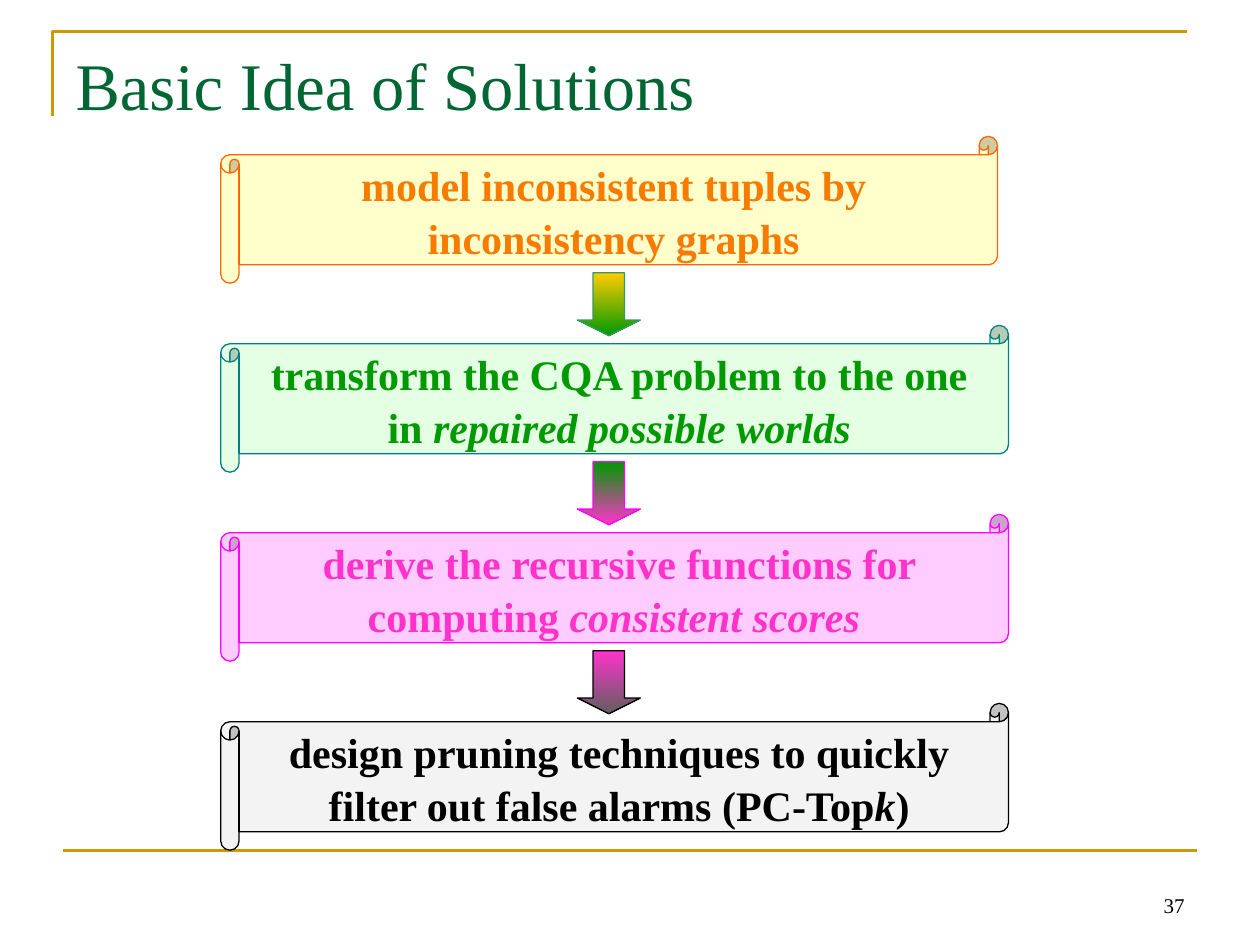
from dataclasses import dataclass

from lxml.etree import SubElement
from pptx import Presentation
from pptx.dml.color import RGBColor as RGB
from pptx.enum.shapes import MSO_CONNECTOR as CONN, MSO_SHAPE as SHAPE
from pptx.enum.text import MSO_ANCHOR as ANCHOR, MSO_AUTO_SIZE as AUTO, PP_ALIGN as ALIGN
from pptx.oxml.ns import qn
from pptx.util import Cm, Pt


@dataclass(frozen=True)
class Theme:
    font: str = "Times New Roman"
    title_size: int = 38
    step_size: int = 24
    number_size: int = 12
    rule_width: float = 1.5
    outline_width: float = 0.75
    title: str = "006633"
    rule: str = "CC9900"
    ink: str = "000000"
    # Each step: fill, outline, text
    steps: tuple = (
        ("FFFFCC", "FF6600", "F67B00"),
        ("E5FFE5", "008080", "009900"),
        ("FFCCFF", "FF00FF", "FF33CC"),
        ("F3F3F3", "000000", "000000"),
    )
    # Each arrow: gradient start, gradient end, outline
    arrows: tuple = (
        ("FFCC00", "009900", "339966"),
        ("009900", "FF33CC", "FF00FF"),
        ("FF33CC", "5F5F5F", "000000"),
    )


class SlideBuilder:
    def __init__(self, slide, theme):
        self.s = slide
        self.theme = theme

    def style_line(self, line, color, width):
        line.color.rgb = RGB.from_string(color)
        line.width = Pt(width)

    def style_text(self, p, size, color, align, bold=False):
        p.alignment = align
        p.font.name = self.theme.font
        p.font.size = Pt(size)
        p.font.bold = bold
        p.font.color.rgb = RGB.from_string(color)

    def title(self, text, x, y, w, h):
        sp = self.s.shapes.title
        sp.left, sp.top, sp.width, sp.height = Cm(x), Cm(y), Cm(w), Cm(h)
        tf = sp.text_frame
        tf.text = text
        tf.auto_size = AUTO.NONE
        tf.vertical_anchor = ANCHOR.TOP
        self.style_text(tf.paragraphs[0], self.theme.title_size, self.theme.title, ALIGN.LEFT)

    def corner(self, x, y, w, h):
        builder = self.s.shapes.build_freeform(Cm(x), Cm(y + h))
        builder.add_line_segments([(Cm(x), Cm(y)), (Cm(x + w), Cm(y))], close=False)
        sp = builder.convert_to_shape()
        sp.shadow.inherit = False
        sp.fill.background()
        self.style_line(sp.line, self.theme.rule, self.theme.rule_width)

    def rule(self, x, y, w):
        line = self.s.shapes.add_connector(CONN.STRAIGHT, Cm(x), Cm(y), Cm(x + w), Cm(y))
        SubElement(line._element.spPr, qn("a:effectLst"))
        self.style_line(line.line, self.theme.rule, self.theme.rule_width)

    def page_number(self, text, x, y, w, h):
        tf = self.s.shapes.add_textbox(Cm(x), Cm(y), Cm(w), Cm(h)).text_frame
        tf.word_wrap = True
        tf.vertical_anchor = ANCHOR.BOTTOM
        tf.text = text
        self.style_text(tf.paragraphs[0], self.theme.number_size, self.theme.ink, ALIGN.RIGHT)

    def shape(self, kind, x, y, w, h, outline):
        sp = self.s.shapes.add_shape(kind, Cm(x), Cm(y), Cm(w), Cm(h))
        sp.shadow.inherit = False
        self.style_line(sp.line, outline, self.theme.outline_width)
        return sp

    def scroll(self, runs, colors, x, y, w, h):
        fill, outline, ink = colors
        sp = self.shape(SHAPE.HORIZONTAL_SCROLL, x, y, w, h, outline)
        sp.fill.solid()
        sp.fill.fore_color.rgb = RGB.from_string(fill)
        tf = sp.text_frame
        tf.word_wrap = True
        tf.vertical_anchor = ANCHOR.MIDDLE
        p = tf.paragraphs[0]
        p.line_spacing = 1.05
        self.style_text(p, self.theme.step_size, ink, ALIGN.CENTER, bold=True)
        for text, italic in runs:
            r = p.add_run()
            r.text = text
            r.font.italic = italic

    def arrow(self, colors, x, y, size):
        start, end, outline = colors
        sp = self.shape(SHAPE.DOWN_ARROW, x, y, size, size, outline)
        sp.adjustments[0], sp.adjustments[1] = 0.5, 0.25
        sp.fill.gradient()
        sp.fill.gradient_angle = 270
        for stop, color in zip(sp.fill.gradient_stops, (start, end)):
            stop.color.rgb = RGB.from_string(color)


# Each step: scroll width and (text, italic) runs
STEPS = (
    (15.66, [("model inconsistent tuples by inconsistency graphs", False)]),
    (15.88, [("transform the CQA problem to the one in ", False),
             ("repaired possible worlds", True)]),
    (15.88, [("derive the recursive functions for computing ", False),
             ("consistent scores ", True)]),
    (15.88, [("design pruning techniques to quickly filter out false alarms (PC-Top", False),
             ("k", True), (")", False)]),
)
STEP_TOP, STEP_PITCH, ARROW_TOP = 2.75, 3.81, 5.5


def main():
    prs = Presentation()
    prs.slide_width, prs.slide_height = Cm(25.4), Cm(19.05)
    theme = Theme()
    slide = SlideBuilder(prs.slides.add_slide(prs.slide_layouts[5]), theme)

    # Frame, page number and title
    slide.corner(1.06, 0.64, 22.86, 1.69)
    slide.rule(1.27, 17.15, 22.86)
    slide.page_number("37", 18.2, 17.36, 5.93, 1.27)
    slide.title("Basic Idea of Solutions", 1.27, 0.76, 22.86, 3.18)

    # Steps
    for i, ((width, runs), colors) in enumerate(zip(STEPS, theme.steps)):
        slide.scroll(runs, colors, 4.45, STEP_TOP + i * STEP_PITCH, width, 2.96)

    # Arrows between the steps
    for i, colors in enumerate(theme.arrows):
        slide.arrow(colors, 11.64, ARROW_TOP + i * STEP_PITCH, 1.27)

    prs.save("out.pptx")


if __name__ == "__main__":
    main()
